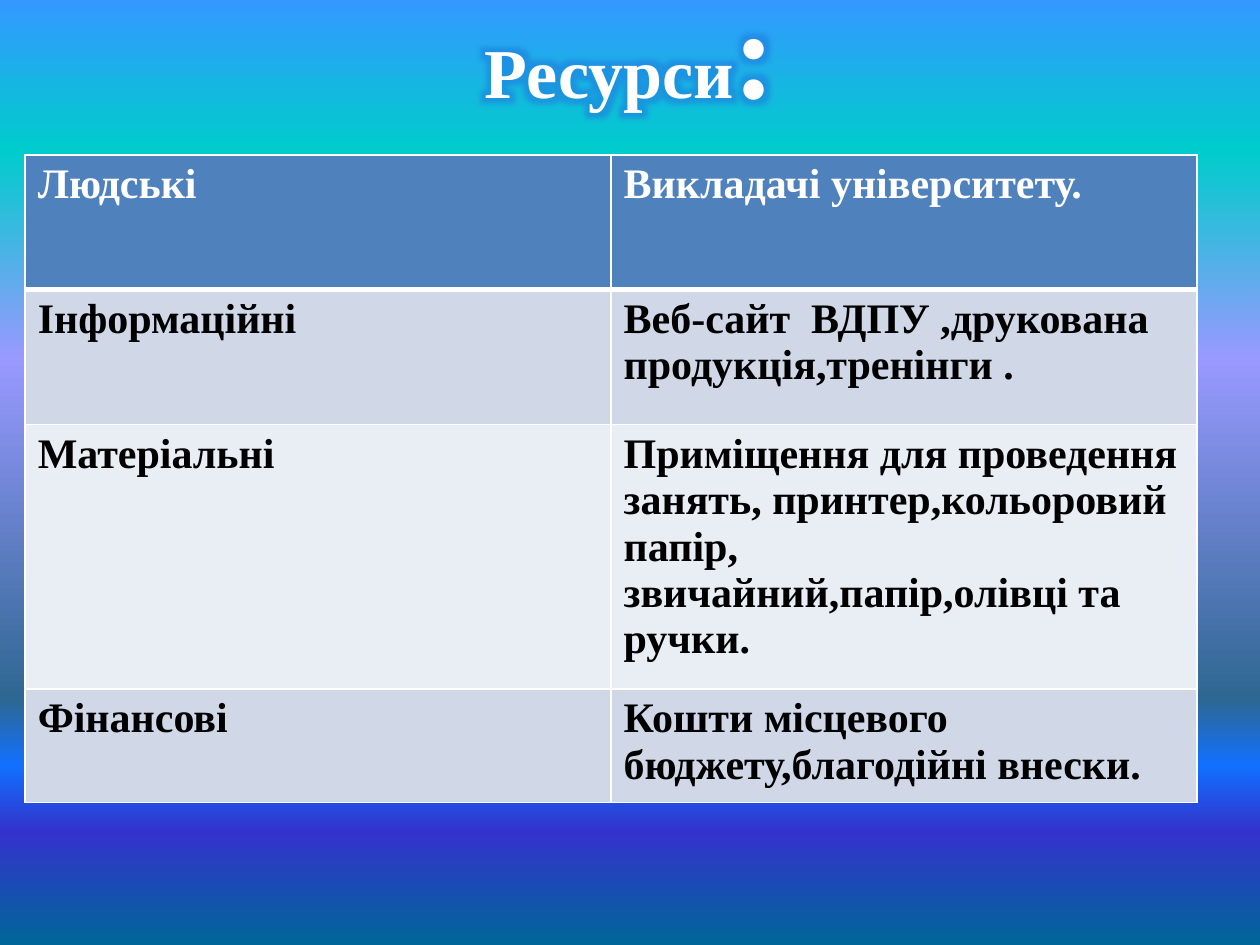
from lxml import etree
from pptx import Presentation
from pptx import util as u
from pptx.dml import color
from pptx.enum import text
from pptx.oxml import ns

W, H = 10, 7.5
FONT = "Times New Roman"
WHITE, BLACK = "FFFFFF", "000000"
STOPS = [(0, "3399FF"), (16, "00CCCC"), (38, "9999FF"), (74, "2E6792"),
         (81, "1170FF"), (88, "3333CC"), (100, "006699")]
ROWS = [
    ("Людські", "Викладачі університету."),
    ("Інформаційні", "Веб-сайт  ВДПУ ,друкована продукція,тренінги ."),
    ("Матеріальні", "Приміщення для проведення занять, принтер,кольоровий папір, "
                    "звичайний,папір,олівці та ручки."),
    ("Фінансові", "Кошти місцевого бюджету,благодійні внески."),
]
ROW_HEIGHTS = [1.07, 1.07, 2.02, 0.59]
HEADER, BANDS = "4F81BD", ("E9EDF4", "D0D8E8")


def rgb(value):
    return color.RGBColor.from_string(value)


def add_xml(parent, tag, **attrs):
    return etree.SubElement(parent, ns.qn(tag), {k: str(v) for k, v in attrs.items()})


def add_background(slide):
    fill = slide.background.fill
    fill.gradient()
    fill.gradient_angle = 270
    stops = fill.gradient_stops[0]._gs.getparent()
    for old in list(stops):
        stops.remove(old)
    for share, value in STOPS:
        gs = add_xml(stops, "a:gs", pos=share * 1000)
        add_xml(gs, "a:srgbClr", val=value)


def add_run(p, words, size, value):
    r = p.add_run()
    r.text = words
    r.font.size = u.Pt(size)
    r.font.bold = True
    r.font.color.rgb = rgb(value)
    r.font.name = FONT
    return r


def add_glow(r, value, radius, alpha):
    effects = etree.Element(ns.qn("a:effectLst"))
    glow = add_xml(effects, "a:glow", rad=u.Pt(radius))
    add_xml(add_xml(glow, "a:srgbClr", val=value), "a:alpha", val=alpha * 1000)
    r.font._element.find(ns.qn("a:solidFill")).addnext(effects)


def add_title(slide):
    sp = slide.shapes.add_textbox(u.Inches(W * 0.05), 0, u.Inches(W * 0.9), u.Inches(0.76))
    tf = sp.text_frame
    tf.word_wrap = True
    tf.vertical_anchor = text.MSO_ANCHOR.MIDDLE
    p = tf.paragraphs[0]
    p.alignment = text.PP_ALIGN.CENTER
    for words, size in (("Ресурси", 40), (":", 72)):
        add_glow(add_run(p, words, size, WHITE), "1F7FE0", 10, 60)


def style_cell(cell, fill, bottom):
    tcPr = cell._tc.get_or_add_tcPr()
    for side, width in (("L", 1), ("R", 1), ("T", 1), ("B", bottom)):
        ln = add_xml(tcPr, f"a:ln{side}", w=u.Pt(width))
        add_xml(add_xml(ln, "a:solidFill"), "a:srgbClr", val=WHITE)
    cell.fill.solid()
    cell.fill.fore_color.rgb = rgb(fill)


def add_resources(slide):
    frame = slide.shapes.add_table(len(ROWS), 2, u.Inches(W * 0.02), u.Inches(1.23),
                                   u.Inches(W * 0.93), u.Inches(sum(ROW_HEIGHTS)))
    table = frame.table
    for i, (row, height) in enumerate(zip(ROWS, ROW_HEIGHTS)):
        table.rows[i].height = u.Inches(height)
        for j, words in enumerate(row):
            cell = table.cell(i, j)
            style_cell(cell, BANDS[i % 2] if i else HEADER, 1 if i else 3)
            if i == 1:
                top = cell._tc.tcPr.find(ns.qn("a:lnT"))
                top.set("w", str(u.Pt(3)))
            add_run(cell.text_frame.paragraphs[0], words, 24, BLACK if i else WHITE)


def main():
    prs = Presentation()
    prs.slide_width, prs.slide_height = u.Inches(W), u.Inches(H)
    slide = prs.slides.add_slide(prs.slide_layouts[6])
    add_background(slide)
    add_title(slide)
    add_resources(slide)
    prs.save("out.pptx")


if __name__ == "__main__":
    main()
